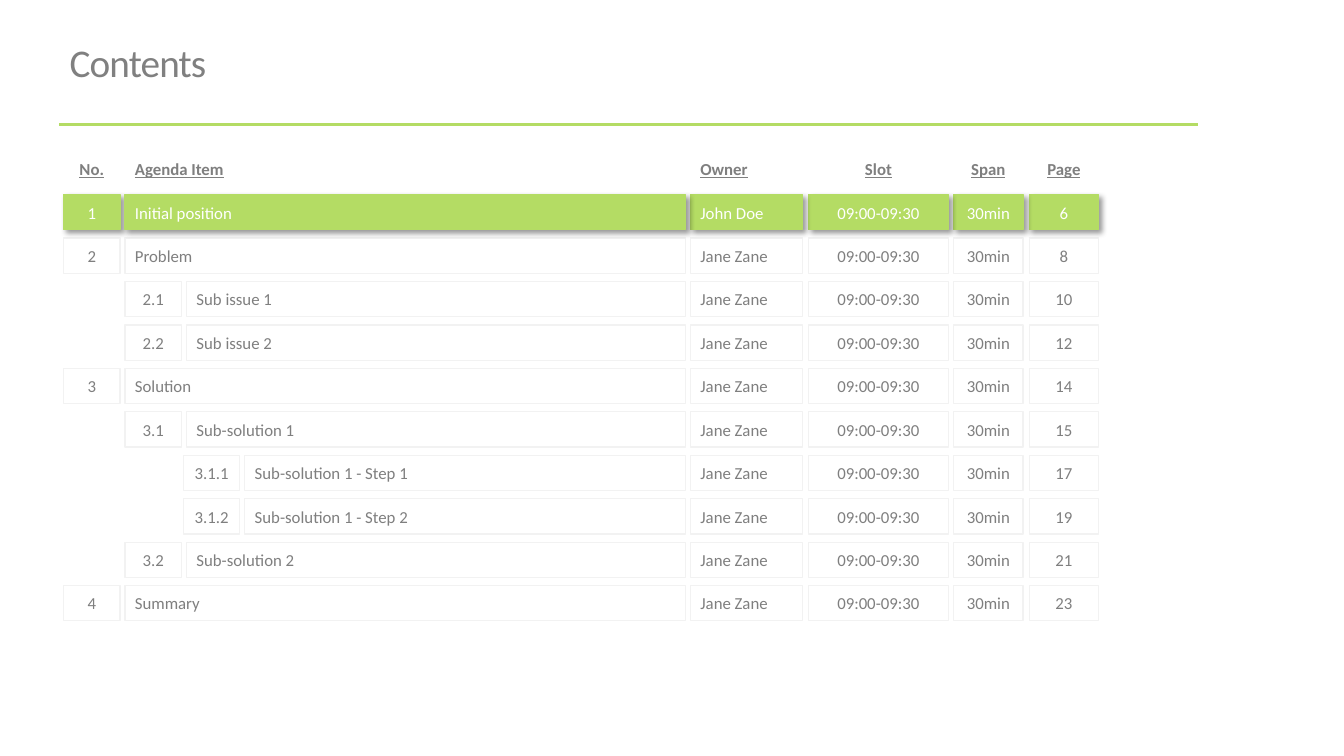
import pptx
import pptx.dml.color
import pptx.enum.shapes
import pptx.enum.text
import pptx.oxml
import pptx.oxml.ns
import pptx.util

Pt = pptx.util.Pt
ALIGN = pptx.enum.text.PP_ALIGN
ANCHOR = pptx.enum.text.MSO_ANCHOR
FONT = "Calibri"
COLORS = {
    "green": "B4DC64",
    "grey": "7F7F7F",
    "title": "808080",
    "border": "F2F2F2",
    "white": "FFFFFF",
    "shadow": "000000",
}

# Agenda grid, in points
TOP, ROW_STEP, ROW_HEIGHT = 108, 31.03, 25.2
LEVEL_LEFTS = [45.4, 89.3, 131]
NUMBER_WIDTH, ITEM_OFFSET, ITEM_RIGHT = 40.3, 43.9, 489.5
DETAIL_COLUMNS = [  # left, width, alignment
    (493.2, 79.9, ALIGN.LEFT),
    (577.4, 100.1, ALIGN.CENTER),
    (681.1, 49.7, ALIGN.CENTER),
    (735.1, 49.7, ALIGN.CENTER),
]

HEADER = ("No.", "Agenda Item", "Owner", "Slot", "Span", "Page")
SLOT, SPAN = "09:00-09:30", "30min"
AGENDA = [  # number, item, owner, page
    ("1", "Initial position", "John Doe", "6"),
    ("2", "Problem", "Jane Zane", "8"),
    ("2.1", "Sub issue 1", "Jane Zane", "10"),
    ("2.2", "Sub issue 2", "Jane Zane", "12"),
    ("3", "Solution", "Jane Zane", "14"),
    ("3.1", "Sub-solution 1", "Jane Zane", "15"),
    ("3.1.1", "Sub-solution 1 - Step 1", "Jane Zane", "17"),
    ("3.1.2", "Sub-solution 1 - Step 2", "Jane Zane", "19"),
    ("3.2", "Sub-solution 2", "Jane Zane", "21"),
    ("4", "Summary", "Jane Zane", "23"),
]


def rgb(name):
    return pptx.dml.color.RGBColor.from_string(COLORS[name])


def format_font(font, size, color):
    font.name = FONT
    font.size = Pt(size)
    font.color.rgb = rgb(color)


def add_effects(shape, content=""):
    shape._element.spPr.append(pptx.oxml.parse_xml(
        f'<a:effectLst {pptx.oxml.ns.nsdecls("a")}>{content}</a:effectLst>'))


def add_drop_shadow(shape):
    add_effects(shape, (
        f'<a:outerShdw blurRad="{Pt(4)}" dist="{Pt(3)}" dir="{45 * 60000}" '
        f'algn="tl" rotWithShape="0"><a:srgbClr val="{COLORS["shadow"]}">'
        '<a:alpha val="40000"/></a:srgbClr></a:outerShdw>'))


def add_title(page, text):
    title = page.shapes.title
    title.left, title.top, title.width, title.height = map(
        Pt, (42.5, 13, 810, 67))
    frame = title.text_frame
    frame.text = text
    frame.auto_size = pptx.enum.text.MSO_AUTO_SIZE.NONE
    frame.vertical_anchor = ANCHOR.MIDDLE
    para = frame.paragraphs[0]
    para.alignment = ALIGN.LEFT
    para.line_spacing = 0.9
    span = para.runs[0]
    format_font(span.font, 28, "title")
    span._r.get_or_add_rPr().set("spc", "-60")


def add_rule(page, left, right, top):
    rule = page.shapes.add_connector(
        pptx.enum.shapes.MSO_CONNECTOR.STRAIGHT,
        Pt(left), Pt(top), Pt(right), Pt(top))
    rule.line.color.rgb = rgb("green")
    rule.line.width = Pt(2)
    add_effects(rule)


def add_cell(page, style, text, left, top, width, alignment, is_number=False):
    place = [Pt(length) for length in (left, top, width, ROW_HEIGHT)]
    if style == "header":
        box = page.shapes.add_textbox(*place)
    else:
        box = page.shapes.add_shape(
            pptx.enum.shapes.MSO_SHAPE.RECTANGLE, *place)
        box.line.width = Pt(0.85)
        if style == "current":
            box.fill.solid()
            box.fill.fore_color.rgb = rgb("green")
            box.line.color.rgb = rgb("green")
            add_drop_shadow(box)
        else:
            box.fill.background()
            box.line.color.rgb = rgb("border")
            box.shadow.inherit = False

    frame = box.text_frame
    frame.text = text
    frame.vertical_anchor = ANCHOR.MIDDLE
    frame.word_wrap = not is_number
    if is_number:
        frame.margin_left = frame.margin_right = 0
        frame.margin_top = frame.margin_bottom = 0
    para = frame.paragraphs[0]
    para.alignment = alignment
    font = para.runs[0].font
    format_font(font, 12, "white" if style == "current" else "grey")
    if style == "header":
        font.bold = font.underline = True


def add_row(page, index, style, number, item, *details):
    top = TOP + index * ROW_STEP
    level = 0 if style == "header" else number.count(".")
    number_left = LEVEL_LEFTS[level]
    item_left = number_left + ITEM_OFFSET
    # Right to left, so that shadows fall on the next cell
    for text, column in reversed(list(zip(details, DETAIL_COLUMNS))):
        left, width, alignment = column
        add_cell(page, style, text, left, top, width, alignment)
    add_cell(page, style, number, number_left, top, NUMBER_WIDTH,
             ALIGN.CENTER, is_number=True)
    add_cell(page, style, item, item_left, top, ITEM_RIGHT - item_left,
             ALIGN.LEFT)


def main():
    deck = pptx.Presentation()
    deck.slide_width, deck.slide_height = Pt(960), Pt(540)
    page = deck.slides.add_slide(deck.slide_layouts.get_by_name("Title Only"))

    # Heading
    add_title(page, "Contents")
    add_rule(page, 42.5, 855.4, 88.9)

    # Agenda, bottom row first
    for index in range(len(AGENDA), 0, -1):
        number, item, owner, page_number = AGENDA[index - 1]
        style = "current" if index == 1 else "plain"
        add_row(page, index, style, number, item, owner, SLOT, SPAN,
                page_number)
    add_row(page, 0, "header", *HEADER)

    deck.save("out.pptx")


if __name__ == "__main__":
    main()
